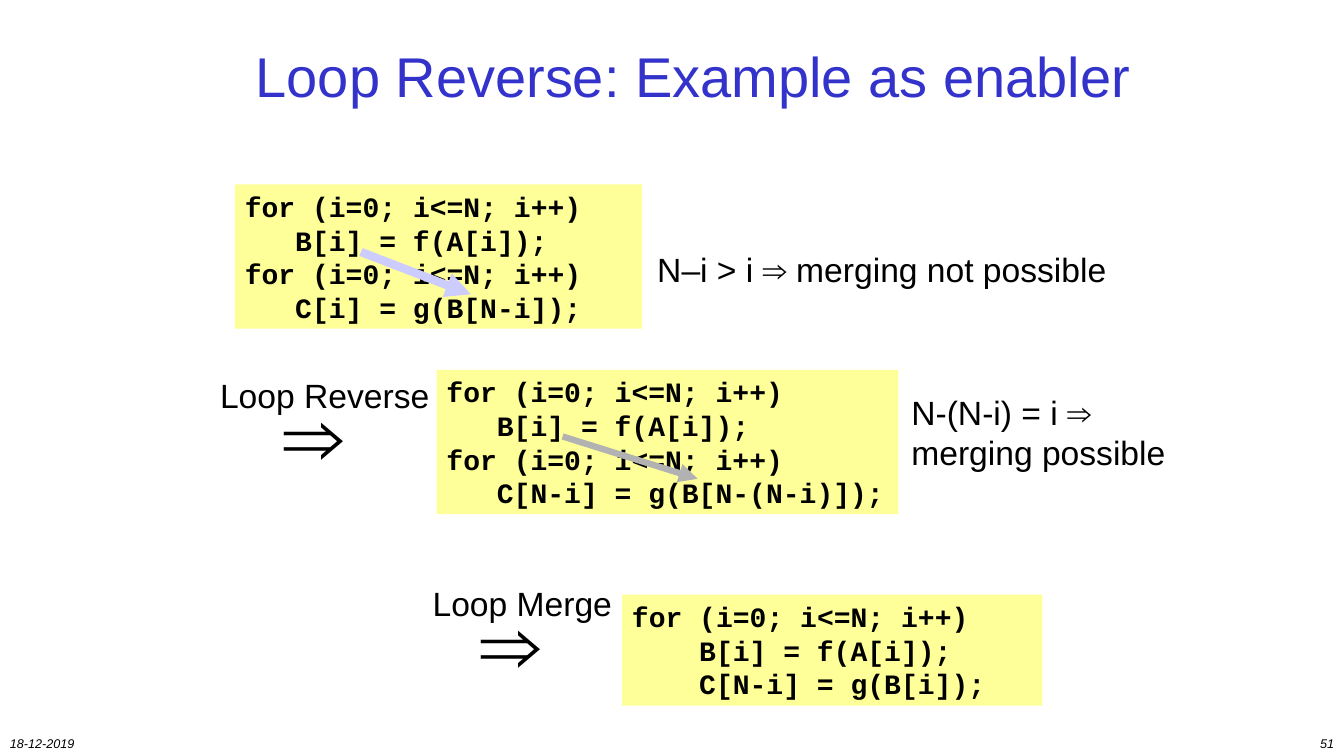
import pptx
import pptx.util
import pptx.dml.color
import pptx.enum.shapes
import pptx.enum.text
import pptx.oxml
import pptx.oxml.ns

Inches = pptx.util.Inches
Pt = pptx.util.Pt
ALIGN = pptx.enum.text.PP_ALIGN
ANCHOR = pptx.enum.text.MSO_ANCHOR
CHAR_WIDTH = 1 / 6


def rgb(value):
    return pptx.dml.color.RGBColor.from_string(value)


def add_line_end(line, tag, **attrs):
    el = pptx.oxml.parse_xml(f"<a:{tag} {pptx.oxml.ns.nsdecls('a')}/>")
    for name, value in attrs.items():
        el.set(name, value)
    line.append(el)


def write(sp, text, size, font="Arial", color="000000", bold=False, italic=False,
          align=ALIGN.LEFT, anchor=ANCHOR.TOP, wrap=True):
    tf = sp.text_frame
    tf.text = text
    tf.word_wrap = wrap
    tf.vertical_anchor = anchor
    for p in tf.paragraphs:
        p.alignment = align
        for r in p.runs:
            r.font.size = Pt(size)
            r.font.name = font
            r.font.bold = bold
            r.font.italic = italic
            r.font.color.rgb = rgb(color)
    return tf


def add_text(s, x, y, w, h, text, size, **style):
    sp = s.shapes.add_textbox(Inches(x), Inches(y), Inches(w), Inches(h))
    return write(sp, text, size, **style)


def add_code(s, x, y, w, h, lines):
    sp = s.shapes.add_shape(pptx.enum.shapes.MSO_SHAPE.RECTANGLE,
                            Inches(x), Inches(y), Inches(w), Inches(h))
    sp.shadow.inherit = False
    sp.fill.solid()
    sp.fill.fore_color.rgb = rgb("FFFF99")
    sp.line.fill.background()
    tf = write(sp, "\n".join(text for indent, text in lines), 20,
               font="Courier New", bold=True)
    for p, (indent, text) in zip(tf.paragraphs, lines):
        if indent:
            p._p.get_or_add_pPr().set("marL", str(Inches(indent * CHAR_WIDTH)))


def add_dependence(s, x, y, dx, dy, color, width):
    c = s.shapes.add_connector(pptx.enum.shapes.MSO_CONNECTOR.STRAIGHT,
                               Inches(x), Inches(y), Inches(x + dx), Inches(y + dy))
    c.line.color.rgb = rgb(color)
    c.line.width = Pt(width)
    add_line_end(c.line._get_or_add_ln(), "tailEnd", type="triangle")
    add_line_end(c._element.spPr, "effectLst")


def add_note(s, x, y, w, h, text):
    add_text(s, x, y, w, h, text, 24, anchor=ANCHOR.MIDDLE, wrap=False)


def add_step(s, x, y, w, text):
    arrow_w = 1.02
    add_text(s, x + (w - arrow_w) / 2, y + 0.08, arrow_w, 1.1, "⇒", 60,
             font="Times New Roman", bold=True, wrap=False)
    add_text(s, x, y, w, 0.5, text, 24, align=ALIGN.CENTER,
             anchor=ANCHOR.MIDDLE, wrap=False)


def add_footer(s, y, width):
    add_text(s, 0, y, 4, 0.25, "18-12-2019", 9, italic=True)
    add_text(s, width - 2.78, y, 2.78, 0.25, "51", 9, italic=True, align=ALIGN.RIGHT)


def main():
    prs = pptx.Presentation()
    prs.slide_width = Inches(13.33)
    prs.slide_height = Inches(7.5)
    s = prs.slides.add_slide(prs.slide_layouts[6])

    add_footer(s, 7.25, 13.33)
    add_text(s, 2.17, 0.33, 9.4, 0.83, "Loop Reverse: Example as enabler", 40,
             color="3333CC", align=ALIGN.CENTER, anchor=ANCHOR.MIDDLE)

    loop = (0, "for (i=0; i<=N; i++)")
    produce = "B[i] = f(A[i]);"

    add_code(s, 2.33, 1.83, 4.04, 1.43,
             [loop, (3, produce), loop, (3, "C[i] = g(B[N-i]);")])
    add_dependence(s, 3.58, 2.5, 1.09, 0.42, "CCCCFF", 6)
    add_note(s, 6.42, 2.42, 4.75, 0.5, "N–i > i ⇒ merging not possible")

    add_step(s, 2.08, 3.67, 2.28, "Loop Reverse")
    add_code(s, 4.33, 3.67, 4.58, 1.43,
             [loop, (3, produce), loop, (3, "C[N-i] = g(B[N-(N-i)]);")])
    add_dependence(s, 5.58, 4.33, 1.34, 0.42, "B2B2B2", 4.5)
    add_note(s, 8.94, 3.83, 2.75, 0.91, "N-(N-i) = i ⇒\nmerging possible")

    add_step(s, 4.19, 5.73, 1.98, "Loop Merge")
    add_code(s, 6.17, 5.9, 4.17, 1.1,
             [loop, (4, produce), (4, "C[N-i] = g(B[i]);")])

    prs.save("out.pptx")


if __name__ == "__main__":
    main()
